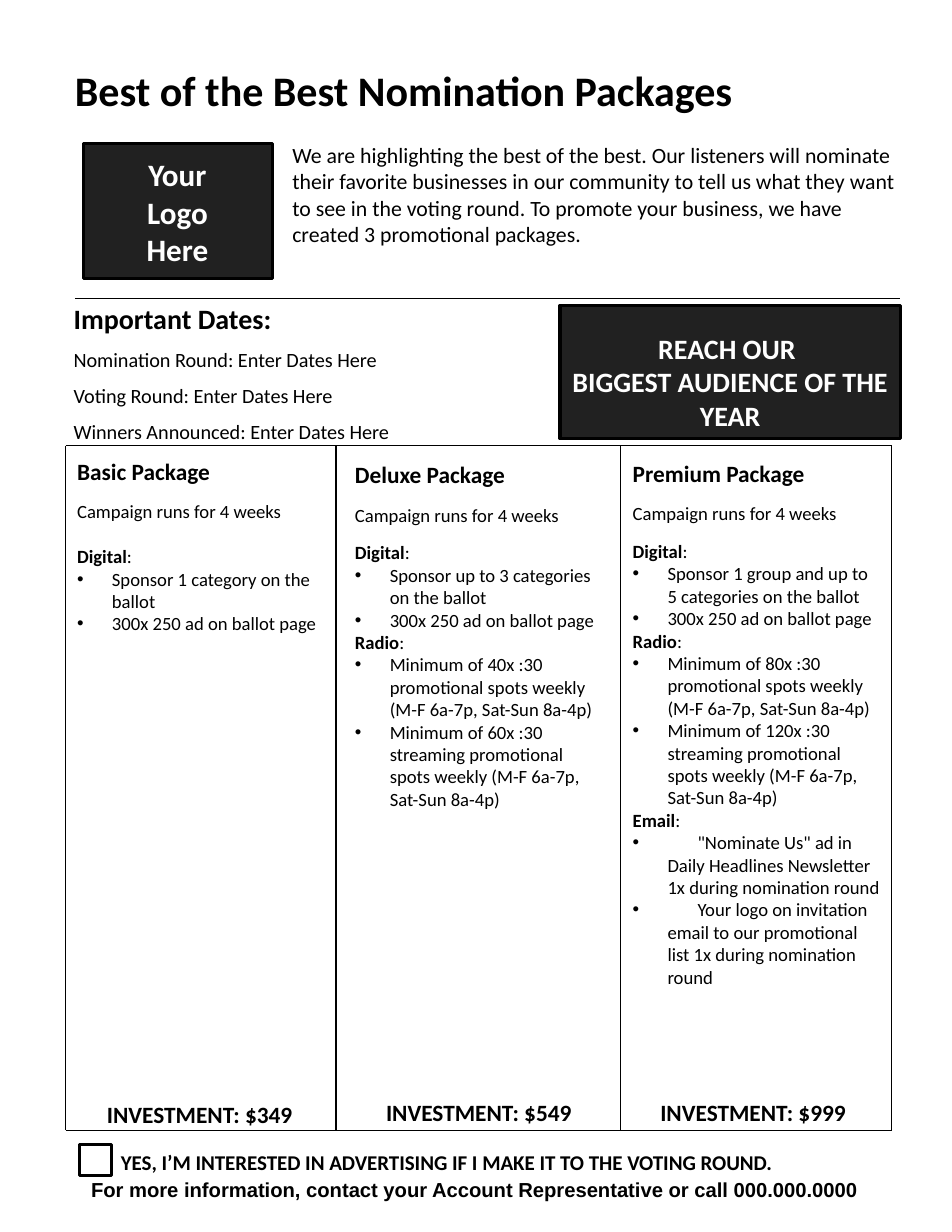
from dataclasses import dataclass

from lxml.etree import SubElement as Sub
from pptx import Presentation as Deck
from pptx.dml.color import RGBColor as Rgb
from pptx.enum.shapes import MSO_CONNECTOR as Link, MSO_SHAPE as Form
from pptx.enum.text import MSO_ANCHOR as Anchor, PP_ALIGN as Align
from pptx.oxml.ns import qn
from pptx.util import Cm, Pt

INK = {"black": "000000", "white": "FFFFFF", "dark": "212121"}
PAD = 0.25
HANG = 0.79
STOPS = (0.69, 1.47)


@dataclass
class Box:
    left: float
    top: float
    width: float
    height: float


@dataclass
class Line:
    text: str
    size: float
    bold: bool = False
    color: str = "black"
    align: Align = Align.LEFT
    before: float = 0
    lead: float = 1.0
    font: str = "Calibri"
    tail: str = ""
    dot: bool = False


@dataclass
class Media:
    head: str
    items: list[str]


@dataclass
class Plan:
    name: str
    price: str
    box: Box
    foot: Box
    gap: float
    media: list[Media]


def mark(para) -> None:
    """Give a paragraph a hanging bullet and its tab stops."""
    props = para._p.get_or_add_pPr()
    props.set("marL", str(Cm(HANG)))
    props.set("indent", str(-Cm(HANG)))
    tint = Sub(Sub(props, qn("a:buClr")), qn("a:srgbClr"))
    tint.set("val", INK["black"])
    Sub(props, qn("a:buFont")).set("typeface", "Arial")
    Sub(props, qn("a:buChar")).set("char", "•")
    tabs = Sub(props, qn("a:tabLst"))
    for stop in STOPS:
        tab = Sub(tabs, qn("a:tab"))
        tab.set("pos", str(Cm(stop)))
        tab.set("algn", "l")


def write(slide, box: Box, lines: list[Line], anchor: Anchor = Anchor.TOP) -> None:
    """Add a text box and fill it run by run."""
    frame = slide.shapes.add_textbox(
        Cm(box.left), Cm(box.top), Cm(box.width), Cm(box.height)).text_frame
    frame.word_wrap = True
    frame.vertical_anchor = anchor
    frame.margin_left = frame.margin_right = Cm(PAD)
    frame.margin_top = frame.margin_bottom = Cm(PAD)
    for num, line in enumerate(lines):
        para = frame.add_paragraph() if num else frame.paragraphs[0]
        para.alignment = line.align
        para.line_spacing = line.lead
        para.space_before = Pt(line.before)
        if line.dot:
            mark(para)
        for text, bold in ((line.text, line.bold), (line.tail, False)):
            if text:
                run = para.add_run()
                run.text = text
                run.font.name = line.font
                run.font.size = Pt(line.size)
                run.font.bold = bold
                run.font.color.rgb = Rgb.from_string(INK[line.color])


def block(slide, box: Box, fill: str) -> None:
    """Draw a filled box with a heavy black edge."""
    shape = slide.shapes.add_shape(
        Form.RECTANGLE, Cm(box.left), Cm(box.top), Cm(box.width), Cm(box.height))
    shape.shadow.inherit = False
    shape.fill.solid()
    shape.fill.fore_color.rgb = Rgb.from_string(INK[fill])
    shape.line.color.rgb = Rgb.from_string(INK["black"])
    shape.line.width = Pt(2)


def rule(slide, x1: float, y1: float, x2: float, y2: float) -> None:
    """Draw a thin black line."""
    line = slide.shapes.add_connector(Link.STRAIGHT, Cm(x1), Cm(y1), Cm(x2), Cm(y2))
    line.line.color.rgb = Rgb.from_string(INK["black"])
    line.line.width = Pt(0.75)
    Sub(line._element.spPr, qn("a:effectLst"))


def offer(slide, plan: Plan) -> None:
    """Write one package and its price."""
    lines = [Line(plan.name, 15, True),
             Line("Campaign runs for 4 weeks", 12, before=9.8)]
    for num, group in enumerate(plan.media):
        gap = 0 if num else plan.gap
        lines.append(Line(group.head, 12, True, before=gap, tail=":"))
        lines += [Line(item, 12, dot=True) for item in group.items]
    write(slide, plan.box, lines)
    price = Line(f"INVESTMENT: {plan.price}", 15, True, align=Align.CENTER)
    write(slide, plan.foot, [price], Anchor.BOTTOM)


def radio(spots: int, stream: int) -> Media:
    """Return the radio group for the given spot counts."""
    hours = "(M-F 6a-7p, Sat-Sun 8a-4p)"
    return Media("Radio", [
        f"Minimum of {spots}x :30 promotional spots weekly {hours}",
        f"Minimum of {stream}x :30 streaming promotional spots weekly {hours}"])


def web(first: str) -> Media:
    """Return the digital group with its first item."""
    return Media("Digital", [first, "300x 250 ad on ballot page"])


PLANS = [
    Plan("Basic Package", "$349", Box(1.5, 10.11, 6.12, 11.51),
         Box(1.42, 24.46, 6.22, 1.37), 14.6,
         [web("Sponsor 1 category on the ballot")]),
    Plan("Deluxe Package", "$549", Box(7.8, 10.19, 6.12, 15.52),
         Box(7.62, 24.41, 6.48, 1.37), 9.8,
         [web("Sponsor up to 3 categories on the ballot"), radio(40, 60)]),
    Plan("Premium Package", "$999", Box(14.1, 10.16, 6.12, 15.39),
         Box(14.02, 24.43, 6.12, 1.37), 9.8,
         [web("Sponsor 1 group and up to 5 categories on the ballot"),
          radio(80, 120),
          Media("Email", [
              "\t\"Nominate Us\" ad in Daily Headlines Newsletter 1x during nomination round",
              "\tYour logo on invitation email to our promotional list 1x during nomination round"])]),
]
INTRO = ("We are highlighting the best of the best. Our listeners will nominate "
         "their favorite businesses in our community to tell us what they want to "
         "see in the voting round. To promote your business, we have created 3 "
         "promotional packages.")
DATES = ["Nomination Round", "Voting Round", "Winners Announced"]


def main() -> None:
    """Build the flyer and save it."""
    deck = Deck()
    deck.slide_width, deck.slide_height = Cm(21.59), Cm(27.94)
    slide = deck.slides.add_slide(deck.slide_layouts[6])
    write(slide, Box(1.45, 1.22, 18.72, 1.7),
          [Line("Best of the Best Nomination Packages", 27, True)])
    write(slide, Box(6.38, 2.97, 14.35, 3.4), [Line(INTRO, 14)])
    rule(slide, 1.7, 6.76, 20.42, 6.76)
    write(slide, Box(1.42, 6.58, 11.28, 3.4),
          [Line("Important Dates:", 18, True)]
          + [Line(f"{name}: Enter Dates Here", 13, lead=1.5) for name in DATES])
    block(slide, Box(1.9, 3.25, 4.29, 3.07), "dark")
    write(slide, Box(1.7, 3.25, 4.65, 3.1),
          [Line(word, 20, True, "white", Align.CENTER)
           for word in ("Your", "Logo", "Here")], Anchor.MIDDLE)
    block(slide, Box(12.7, 6.93, 7.72, 3.02), "dark")
    write(slide, Box(12.7, 7.26, 7.72, 2.39),
          [Line(text, 18, True, "white", Align.CENTER)
           for text in ("REACH OUR ", "BIGGEST AUDIENCE OF THE YEAR")])
    write(slide, Box(1.45, 26.44, 18.72, 1.02),
          [Line("For more information, contact your Account Representative "
                "or call 000.000.0000 ", 13, True, align=Align.CENTER, font="Arial")])
    write(slide, Box(2.49, 25.83, 18.72, 1.02),
          [Line("YES, I’M INTERESTED IN ADVERTISING IF I MAKE IT TO THE VOTING ROUND.",
                13.5, True)])
    block(slide, Box(1.8, 25.96, 0.74, 0.71), "white")
    for y in (10.11, 25.63):
        rule(slide, 1.49, y, 20.22, y)
    for x in (1.49, 7.62, 14.07, 20.22):
        rule(slide, x, 10.11, x, 25.63)
    for plan in PLANS:
        offer(slide, plan)
    deck.save("out.pptx")


if __name__ == "__main__":
    main()
